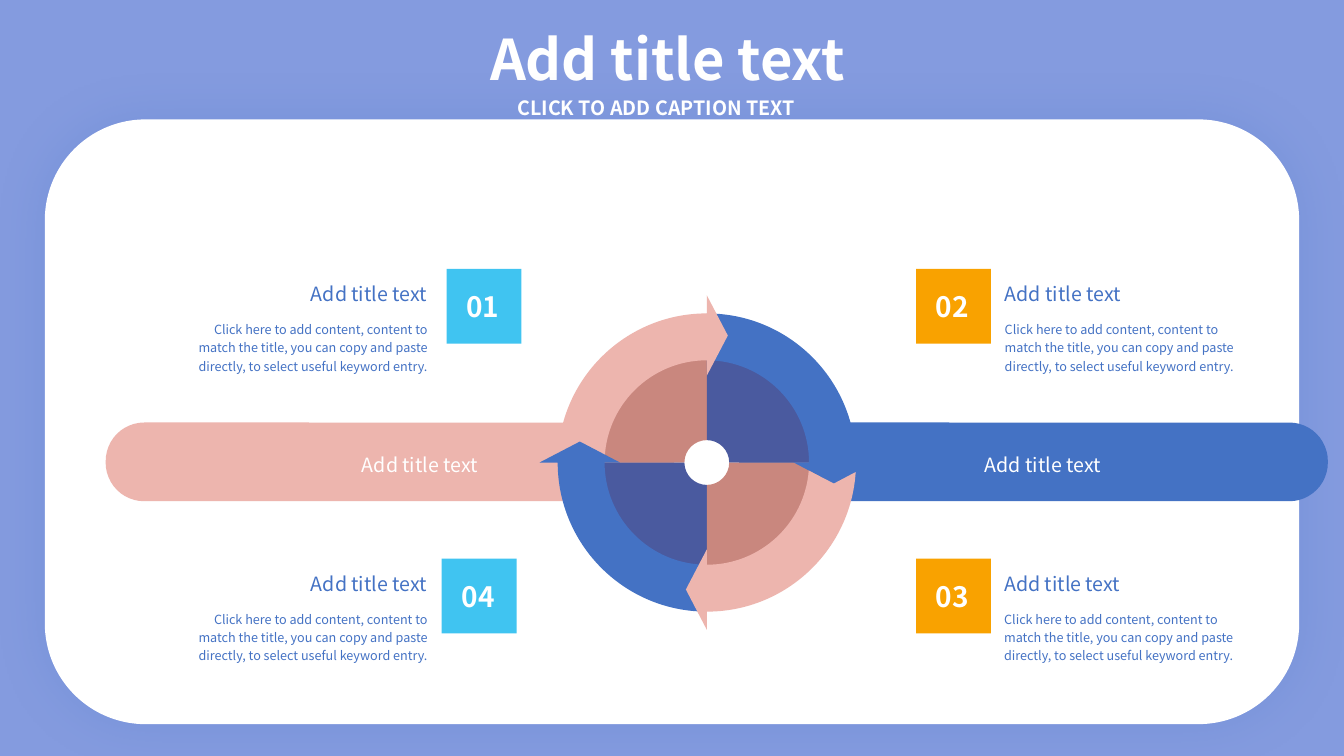
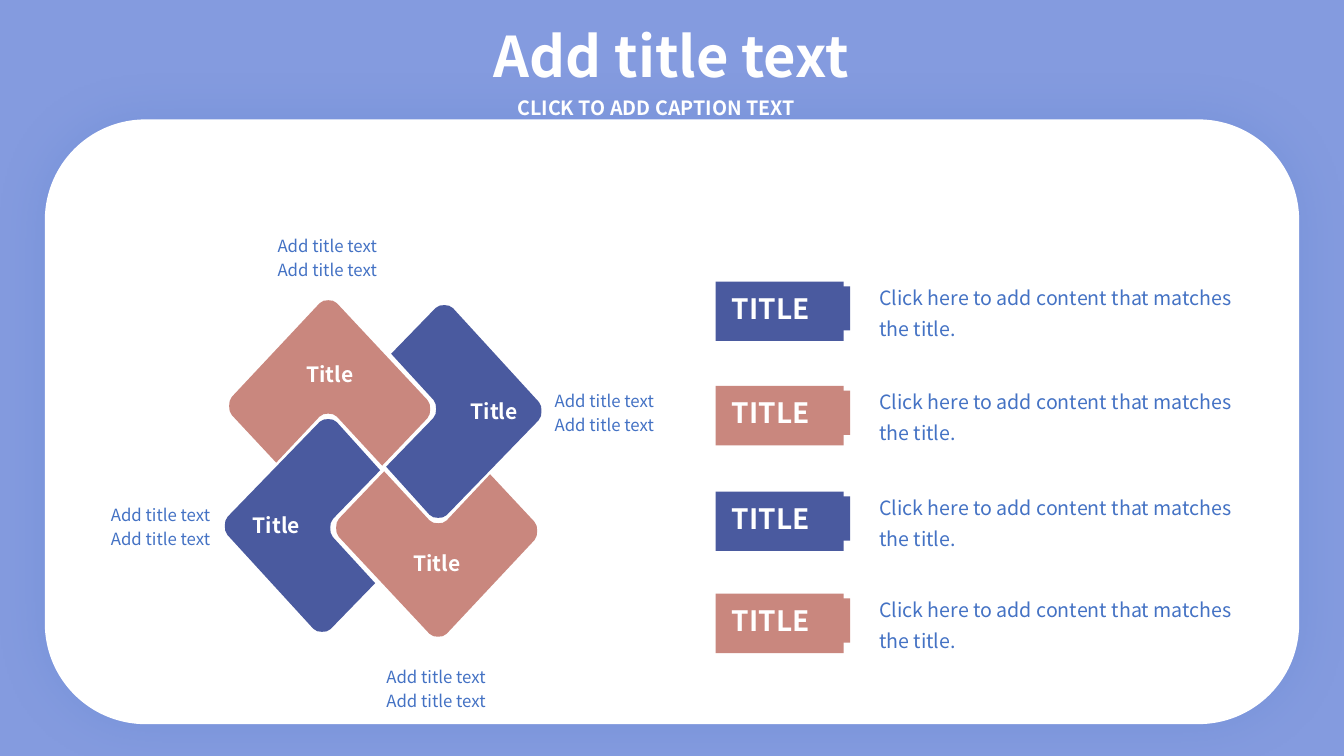
"""Build two slides: a four-part arrow wheel and a set of interlocking tiles."""
from math import cos, radians, sin, tan

from lxml import etree
from pptx import Presentation
from pptx.dml.color import RGBColor
from pptx.enum.shapes import MSO_SHAPE
from pptx.enum.text import MSO_ANCHOR, PP_ALIGN
from pptx.oxml.ns import qn
from pptx.util import Pt

RECTANGLE = MSO_SHAPE.RECTANGLE
ROUNDED = MSO_SHAPE.ROUNDED_RECTANGLE
LEFT, CENTER, RIGHT = PP_ALIGN.LEFT, PP_ALIGN.CENTER, PP_ALIGN.RIGHT
TOP, MIDDLE = MSO_ANCHOR.TOP, MSO_ANCHOR.MIDDLE

FONT = "Noto Sans CJK SC"
COLORS = {
    "page": "849BDF", "white": "FFFFFF", "blue": "4472C4", "pink": "EDB5AE",
    "navy": "4A5A9F", "clay": "C9877E", "cyan": "40C4F1", "orange": "F9A200",
}
HEADING = "Add title text"
CAPTION = "CLICK TO ADD CAPTION TEXT"
DETAIL = ("Click here to add content, content to match the title, you can copy "
          "and paste directly, to select useful keyword entry.")
SUMMARY = "Click here to add content that matches the title."


def color(name):
    return RGBColor.from_string(COLORS[name])


def write(frame, text, size=14, ink="white", bold=False, align=LEFT,
          anchor=MIDDLE, spacing=None, margins=(0, 0, 0, 0)):
    frame.word_wrap = True
    frame.vertical_anchor = anchor
    frame.margin_left, frame.margin_top, frame.margin_right, frame.margin_bottom = map(Pt, margins)
    frame.text = text
    for para in frame.paragraphs:
        para.alignment = align
        para.line_spacing = spacing
        for span in para.runs:
            span.font.name = FONT
            span.font.size = Pt(size)
            span.font.bold = bold
            span.font.color.rgb = color(ink)


def wheel_point(radius, angle, ahead=0):
    turn = radians(angle)
    return (504.9 + radius * sin(turn) + ahead * cos(turn),
            330.4 - radius * cos(turn) + ahead * sin(turn))


def arc(radius, start, end):
    reach = radius * 4 / 3 * tan(radians(end - start) / 4)
    return [[wheel_point(radius, start)],
            [wheel_point(radius, start, reach), wheel_point(radius, end, -reach),
             wheel_point(radius, end)]]


def blend(*terms):
    return tuple(sum(weight * point[axis] for weight, point in terms) for axis in (0, 1))


def rounded_corner(before, corner, after, cut=9):
    ends = []
    for other in (before, after):
        length = ((other[0] - corner[0]) ** 2 + (other[1] - corner[1]) ** 2) ** 0.5
        ends.append(blend((1 - cut / length, corner), (cut / length, other)))
    first, last = ends
    apex = blend((0.34, first), (0.32, corner), (0.34, last))
    return [[first],
            [blend((0.73, first), (0.27, corner)),
             blend((1, apex), (0.19, first), (-0.19, last)), apex],
            [blend((1, apex), (0.19, last), (-0.19, first)),
             blend((0.73, last), (0.27, corner)), last]]


def soften(corners, sharp):
    steps = []
    for index, corner in enumerate(corners):
        if index in sharp:
            steps.append([corner])
        else:
            following = corners[(index + 1) % len(corners)]
            steps += rounded_corner(corners[index - 1], corner, following)
    return steps


class Deck:
    """Hold the shared style and the current page."""

    def __init__(self):
        self.deck = Presentation()
        self.deck.slide_width, self.deck.slide_height = Pt(960), Pt(540)
        fill = self.deck.slide_master.background.fill
        fill.solid()
        fill.fore_color.rgb = color("page")

    def add_page(self, title, caption, title_area):
        self.page = self.deck.slides.add_slide(self.deck.slide_layouts[5])
        heading = self.page.shapes.title
        heading.left, heading.top, heading.width, heading.height = map(Pt, title_area)
        write(heading.text_frame, title, size=40, bold=True, align=CENTER)
        panel = self.shape(ROUNDED, (32, 85.3, 896, 432), "white")
        self.glow(panel)
        self.text((369.6, 68.5, 221, 17), caption, bold=True)

    def glow(self, shape):
        effects = shape._element.spPr.find(qn("a:effectLst"))
        shadow = etree.SubElement(effects, qn("a:outerShdw"), blurRad=str(Pt(37)),
                                  dist="0", dir="0", algn="ctr", rotWithShape="0")
        tint = etree.SubElement(shadow, qn("a:srgbClr"), val=COLORS["blue"])
        etree.SubElement(tint, qn("a:alpha"), val="22000")

    def paint(self, shape, fill):
        shape.shadow.inherit = False
        shape.line.fill.background()
        if fill:
            shape.fill.solid()
            shape.fill.fore_color.rgb = color(fill)
        else:
            shape.fill.background()
        return shape

    def shape(self, kind, area, fill=None):
        return self.paint(self.page.shapes.add_shape(kind, *map(Pt, area)), fill)

    def outline(self, steps, fill):
        start, *rest = [(Pt(x), Pt(y)) for step in steps for x, y in step]
        builder = self.page.shapes.build_freeform(*start)
        builder.add_line_segments(rest, close=True)
        shape = builder.convert_to_shape()
        segments = iter(shape._element.findall(".//" + qn("a:lnTo")))
        for step in steps[1:]:
            parts = [next(segments) for point in step]
            if len(parts) == 3:
                curve = etree.Element(qn("a:cubicBezTo"))
                parts[0].addprevious(curve)
                for part in parts:
                    curve.append(part[0])
                    part.getparent().remove(part)
        return self.paint(shape, fill)

    def text(self, area, text, **style):
        box = self.page.shapes.add_textbox(*map(Pt, area))
        write(box.text_frame, text, **style)

    def bar(self, left, width, fill):
        bar = self.shape(ROUNDED, (left, 301.8, width, 56.2), fill)
        bar.adjustments[0] = 0.49

    def bar_label(self, left):
        label = self.shape(RECTANGLE, (left, 321, 129.6, 18))
        write(label.text_frame, HEADING, align=CENTER, spacing=1.2)

    def sector(self, start, fill):
        self.outline(arc(81, start, start + 90) + arc(16, start + 90, start), fill)

    def arrow(self, start, fill, notched=False):
        end = start + 90
        head = [[wheel_point(119.5, end)], [wheel_point(90.7, end, 15)],
                [wheel_point(62, end)]]
        outer, inner = (start + 3.65, start + 4.5) if notched else (start, start)
        notch = [[wheel_point(90.7, start, 15)]] if notched else []
        self.outline(arc(106.5, outer, end) + head + arc(73, end, inner) + notch, fill)

    def callout(self, number, top, square_left, text_left, align, fill):
        self.text((text_left, top + 3.7, 177, 25), HEADING, ink="blue",
                  align=align, spacing=1.2)
        self.text((text_left, top + 36, 177, 48), DETAIL, size=9, ink="blue",
                  align=align, anchor=TOP, spacing=1.2)
        self.shape(RECTANGLE, (square_left, top, 53.5, 53.5), fill)
        self.text((square_left + 4.5, top + 6.8, 43, 35), number, size=20, bold=True,
                  align=CENTER, spacing=1.2)

    def tile(self, steps, fill, align, margins):
        tile = self.outline(steps, fill)
        write(tile.text_frame, "Title", size=15, bold=True, align=align, margins=margins)

    def summary_row(self, top, fill):
        self.shape(RECTANGLE, (511.2, top, 91.5, 42.5), fill)
        tag = self.shape(RECTANGLE, (515.7, top + 3.5, 91.5, 31.5), fill)
        write(tag.text_frame, "TITLE", size=20, bold=True, margins=(7.2, 3.6, 7.2, 3.6))
        self.text((623, top - 4.8, 281.5, 47.5), SUMMARY, ink="blue", anchor=TOP,
                  spacing=1.3, margins=(5, 3, 5, 3))


def wheel_page(deck):
    deck.add_page(HEADING, CAPTION, (329.3, 17.5, 295, 48))
    deck.bar(75.5, 406, "pink")
    deck.bar(528, 420.5, "blue")
    for left in (235.3, 680.3):
        deck.bar_label(left)
    for start, fill in ((270, "clay"), (180, "navy"), (0, "navy"), (90, "clay")):
        deck.sector(start, fill)
    for start, fill in ((0, "blue"), (270, "pink"), (180, "blue")):
        deck.arrow(start, fill)
    deck.arrow(90, "pink", notched=True)
    upper, lower = 192, 399
    deck.callout("01", upper, 319, 128.2, RIGHT, "cyan")
    deck.callout("02", upper, 654.3, 717.7, LEFT, "orange")
    deck.callout("04", lower, 315.5, 128.2, RIGHT, "cyan")
    deck.callout("03", lower, 654.3, 717.3, LEFT, "orange")


def tiles_page(deck):
    deck.add_page(HEADING, CAPTION, (325.6, 15.3, 308, 48))
    top_corners = [(234.5, 210), (311.5, 292.3), (273, 332.6), (234.5, 291),
                   (197.3, 330.5), (159.5, 290)]
    right_corners = [(317.5, 213.5), (391, 293.8), (312.8, 374.4), (275.8, 333.4),
                     (315.7, 292.3), (279.4, 252.7)]
    bottom_corners, left_corners = ([(547.4 - x, 669.3 - y) for x, y in corners]
                                    for corners in (top_corners, right_corners))
    for corners, sharp, fill, align, margins in (
            (left_corners, (3, 5), "navy", LEFT, (20, 0, 0, 0)),
            (top_corners, (2, 4), "clay", CENTER, (0, 0, 0, 13)),
            (right_corners, (3, 5), "navy", RIGHT, (0, 0, 17, 0)),
            (bottom_corners, (2, 4), "clay", CENTER, (0, 13, 0, 0))):
        deck.tile(soften(corners, sharp), fill, align, margins)
    for left, top, align in ((391.2, 267.2, LEFT), (237, 464, CENTER),
                             (159.3, 156, CENTER), (6.2, 348.5, RIGHT)):
        deck.text((left, top, 149, 53), f"{HEADING}\n{HEADING}", size=12, ink="blue",
                  align=align, spacing=1.2, margins=(5, 3, 5, 3))
    for top, fill in ((201.1, "navy"), (275.6, "clay"), (351.1, "navy"), (424, "clay")):
        deck.summary_row(top, fill)


def main():
    deck = Deck()
    wheel_page(deck)
    tiles_page(deck)
    deck.deck.save("out.pptx")


if __name__ == "__main__":
    main()
